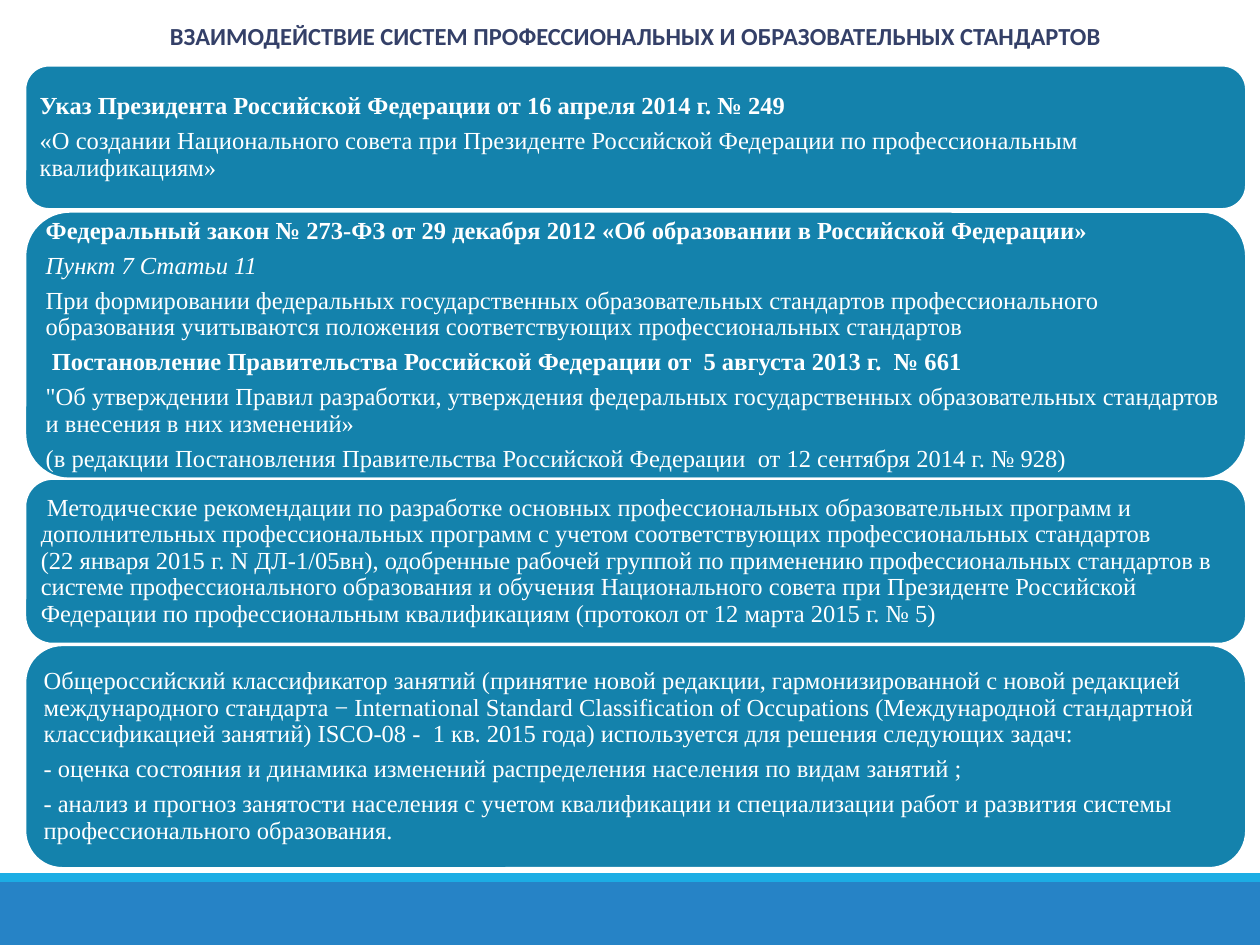
from pptx import Presentation
from pptx.dml.color import RGBColor
from pptx.enum.shapes import MSO_SHAPE
from pptx.enum.text import MSO_ANCHOR, PP_ALIGN
from pptx.util import Inches, Pt

WHITE = RGBColor(0xFF, 0xFF, 0xFF)
NAVY = RGBColor(0x34, 0x40, 0x68)
TEAL = RGBColor(0x14, 0x82, 0xAC)
BLUE = RGBColor(0x26, 0x83, 0xC6)
SKY = RGBColor(0x1C, 0xAD, 0xE4)

LEFT, WIDTH = 0.2, 9.69
TITLE = "ВЗАИМОДЕЙСТВИЕ СИСТЕМ ПРОФЕССИОНАЛЬНЫХ И ОБРАЗОВАТЕЛЬНЫХ СТАНДАРТОВ"
BOLD = {"bold": True}
ITALIC = {"italic": True}
PLAIN = {}

# Each panel: top, height, paragraphs as (text, font format)
PANELS = [
    (0.52, 1.14, [
        ("Указ Президента Российской Федерации от 16 апреля 2014 г. № 249", BOLD),
        ("«О создании Национального совета при Президенте Российской Федерации "
         "по профессиональным квалификациям»", PLAIN),
    ]),
    (1.68, 2.12, [
        ("Федеральный закон № 273-ФЗ от 29 декабря 2012 "
         "«Об образовании в Российской Федерации»", BOLD),
        ("Пункт 7 Статьи 11", ITALIC),
        ("При формировании федеральных государственных образовательных стандартов "
         "профессионального образования учитываются положения соответствующих "
         "профессиональных стандартов", PLAIN),
        (" Постановление Правительства Российской Федерации "
         "от  5 августа 2013 г.  № 661", BOLD),
        ("\"Об утверждении Правил разработки, утверждения федеральных "
         "государственных образовательных стандартов и внесения в них изменений»", PLAIN),
        ("(в редакции Постановления Правительства Российской Федерации  "
         "от 12 сентября 2014 г. № 928)", PLAIN),
    ]),
    (3.8, 1.31, [
        (" Методические рекомендации по разработке основных профессиональных "
         "образовательных программ и дополнительных профессиональных программ "
         "с учетом соответствующих профессиональных стандартов\v"
         "(22 января 2015 г. N ДЛ-1/05вн), одобренные рабочей группой по применению "
         "профессиональных стандартов в системе профессионального образования и "
         "обучения Национального совета при Президенте Российской Федерации по "
         "профессиональным квалификациям (протокол от 12 марта 2015 г. № 5)", PLAIN),
    ]),
    (5.12, 1.77, [
        ("Общероссийский классификатор занятий (принятие новой редакции, "
         "гармонизированной с новой редакцией международного стандарта − "
         "International Standard Classification of Occupations (Международной "
         "стандартной классификацией занятий) ISСO-08 -  1 кв. 2015 года) "
         "используется для решения следующих задач:", PLAIN),
        ("- оценка состояния и динамика изменений распределения населения "
         "по видам занятий ;", PLAIN),
        ("- анализ и прогноз занятости населения с учетом квалификации и "
         "специализации работ и развития системы профессионального образования.", PLAIN),
    ]),
]


def set_attributes(target, values):
    for name, value in values.items():
        setattr(target, name, value)


def write_paragraph(paragraph, text, name, color, font_format, paragraph_format):
    paragraph.text = text
    set_attributes(paragraph, paragraph_format)
    for run in paragraph.runs:
        set_attributes(run.font, {"name": name, "size": Pt(14), **font_format})
        run.font.color.rgb = color


def add_filled_shape(slide, kind, left, top, width, height, color):
    shape = slide.shapes.add_shape(
        kind, Inches(left), Inches(top), Inches(width), Inches(height))
    shape.shadow.inherit = False
    shape.fill.solid()
    shape.fill.fore_color.rgb = color
    shape.line.fill.background()
    return shape


def add_title(slide):
    box = slide.shapes.add_textbox(
        Inches(LEFT), Inches(0.05), Inches(WIDTH), Inches(0.47))
    frame = box.text_frame
    set_attributes(frame, {"word_wrap": True, "vertical_anchor": MSO_ANCHOR.MIDDLE})
    write_paragraph(frame.paragraphs[0], TITLE, "Calibri", NAVY, BOLD,
                    {"alignment": PP_ALIGN.CENTER})


def add_panel(slide, top, height, paragraphs):
    shape = add_filled_shape(slide, MSO_SHAPE.ROUNDED_RECTANGLE,
                             LEFT, top, WIDTH, height, TEAL)
    shape.line.color.rgb = WHITE
    shape.line.width = Pt(1.25)
    frame = shape.text_frame
    sides = ("left", "top", "right", "bottom")
    set_attributes(frame, {f"margin_{side}": Inches(0.06) for side in sides})
    set_attributes(frame, {"word_wrap": True, "vertical_anchor": MSO_ANCHOR.MIDDLE})
    for index, (text, font_format) in enumerate(paragraphs):
        paragraph = frame.add_paragraph() if index else frame.paragraphs[0]
        write_paragraph(paragraph, text, "Times New Roman", WHITE, font_format,
                        {"alignment": PP_ALIGN.LEFT, "line_spacing": 0.9,
                         "space_after": Pt(4.9)})


def main():
    presentation = Presentation()
    presentation.slide_width = Inches(10)
    presentation.slide_height = Inches(7.5)
    slide = presentation.slides.add_slide(presentation.slide_layouts[6])

    add_filled_shape(slide, MSO_SHAPE.RECTANGLE, 0, 7, 10, 0.5, BLUE)
    add_filled_shape(slide, MSO_SHAPE.RECTANGLE, 0, 6.93, 10, 0.07, SKY)
    add_title(slide)
    for top, height, paragraphs in PANELS:
        add_panel(slide, top, height, paragraphs)

    presentation.save("out.pptx")


if __name__ == "__main__":
    main()
